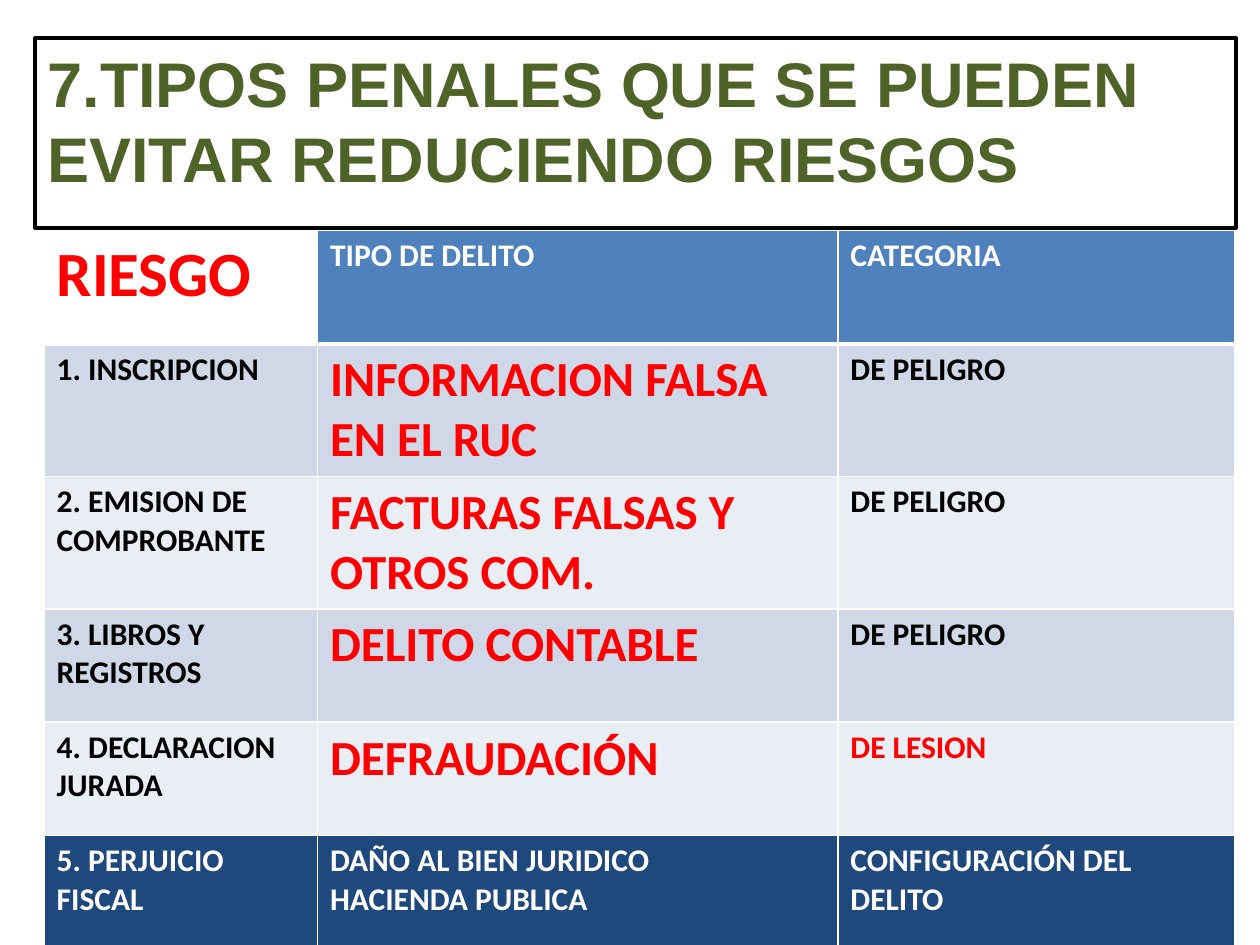
import pptx
import pptx.dml.color
import pptx.enum.shapes
import pptx.enum.text
import pptx.util
from lxml import etree
from pptx.dml.color import RGBColor
from pptx.oxml.ns import qn
from pptx.util import Inches

WHITE = RGBColor(0xFF, 0xFF, 0xFF)
BLACK = RGBColor(0x00, 0x00, 0x00)
RED = RGBColor(0xFF, 0x00, 0x00)
OLIVE = RGBColor(0x4F, 0x62, 0x28)
BLUE = RGBColor(0x4F, 0x81, 0xBD)
NAVY = RGBColor(0x1F, 0x49, 0x7D)
BAND_DARK = RGBColor(0xD0, 0xD8, 0xE8)
BAND_LIGHT = RGBColor(0xE9, 0xED, 0xF4)

TITLE = "7.TIPOS PENALES QUE SE PUEDEN EVITAR REDUCIENDO RIESGOS"
HEADER = ("RIESGO", "TIPO DE DELITO", "CATEGORIA")
RISKS = [
    ("1. INSCRIPCION", "INFORMACION FALSA EN EL RUC", "DE PELIGRO"),
    ("2. EMISION DE COMPROBANTE", "FACTURAS FALSAS Y OTROS COM.", "DE PELIGRO"),
    ("3. LIBROS Y REGISTROS", "DELITO CONTABLE", "DE PELIGRO"),
    ("4. DECLARACION JURADA", "DEFRAUDACIÓN", "DE LESION"),
]
RESULT = ("5. PERJUICIO FISCAL", "DAÑO AL BIEN JURIDICO\nHACIENDA PUBLICA",
          "CONFIGURACIÓN DEL DELITO")
COL_WIDTHS = (2.17, 4.13, 3.15)
ROW_HEIGHT = 0.9


def write(tf, text, size, color, font="Calibri"):
    for i, line in enumerate(text.split("\n")):
        p = tf.paragraphs[0] if i == 0 else tf.add_paragraph()
        p.alignment = pptx.enum.text.PP_ALIGN.LEFT
        r = p.add_run()
        r.text = line
        r.font.name = font
        r.font.size = pptx.util.Pt(size)
        r.font.bold = True
        r.font.color.rgb = color


def set_borders(cell, bottom_width):
    tcPr = cell._tc.get_or_add_tcPr()
    for side, width in (("L", 1), ("R", 1), ("T", 1), ("B", bottom_width)):
        ln = etree.SubElement(tcPr, qn(f"a:ln{side}"), w=str(pptx.util.Pt(width)))
        fill = etree.SubElement(ln, qn("a:solidFill"))
        etree.SubElement(fill, qn("a:srgbClr"), val=str(WHITE))


def cell_style(row, col, text):
    """Return fill, text size and text colour."""
    if row == 0:
        return (WHITE, 36, RED) if col == 0 else (BLUE, 18, WHITE)
    if row > len(RISKS):
        return NAVY, 18, WHITE
    band = BAND_DARK if row % 2 else BAND_LIGHT
    if col == 1:
        return band, 28, RED
    return band, 18, RED if text == "DE LESION" else BLACK


prs = pptx.Presentation()
prs.slide_width, prs.slide_height = Inches(10), Inches(7.5)
slide = prs.slides.add_slide(prs.slide_layouts[6])

# Title box
sp = slide.shapes.add_shape(pptx.enum.shapes.MSO_SHAPE.RECTANGLE,
                            Inches(0.28), Inches(0.3), Inches(9.53), Inches(1.51))
sp.shadow.inherit = False
sp.fill.solid()
sp.fill.fore_color.rgb = WHITE
sp.line.color.rgb = BLACK
sp.line.width = pptx.util.Pt(2)
tf = sp.text_frame
tf.word_wrap = True
tf.vertical_anchor = pptx.enum.text.MSO_ANCHOR.TOP
write(tf, TITLE, 36, OLIVE, "Arial")

# Risk table
rows = [HEADER, *RISKS, RESULT]
table = slide.shapes.add_table(len(rows), len(COL_WIDTHS), Inches(0.35), Inches(1.83),
                               Inches(sum(COL_WIDTHS)),
                               Inches(ROW_HEIGHT * len(rows))).table
for column, width in zip(table.columns, COL_WIDTHS):
    column.width = Inches(width)
for i, texts in enumerate(rows):
    table.rows[i].height = Inches(ROW_HEIGHT)
    for j, text in enumerate(texts):
        cell = table.cell(i, j)
        fill, size, color = cell_style(i, j, text)
        set_borders(cell, 3 if i == 0 else 1)
        cell.fill.solid()
        cell.fill.fore_color.rgb = fill
        write(cell.text_frame, text, size, color)

prs.save("out.pptx")
